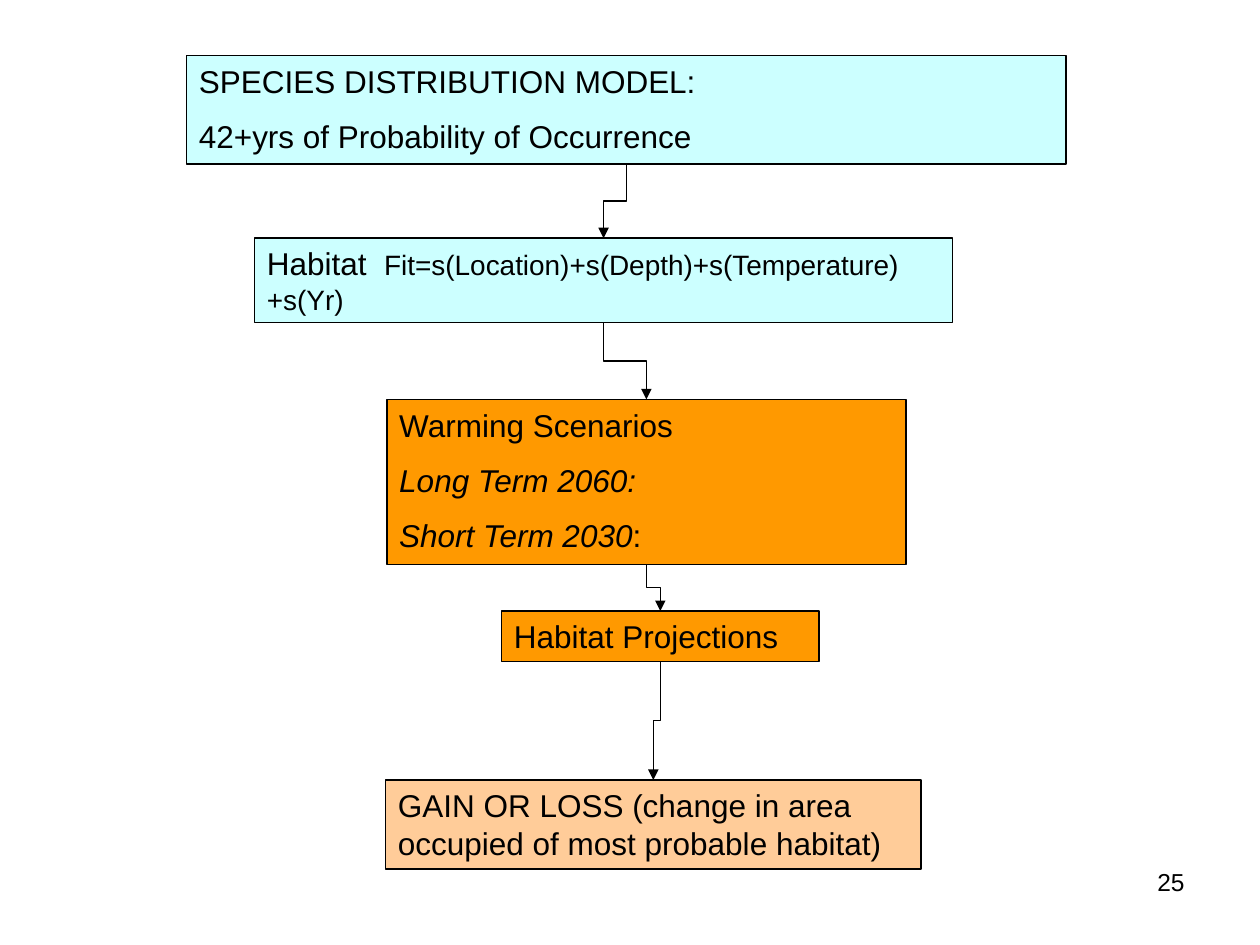
from itertools import pairwise

from pptx import Presentation
from pptx.dml.color import RGBColor
from pptx.enum.shapes import MSO_CONNECTOR, MSO_SHAPE
from pptx.enum.text import MSO_ANCHOR, PP_ALIGN
from pptx.oxml.ns import qn
from pptx.util import Inches, Pt
from lxml import etree

ELBOW = MSO_CONNECTOR.ELBOW
RECTANGLE = MSO_SHAPE.RECTANGLE
TOP = MSO_ANCHOR.TOP
LEFT, RIGHT = PP_ALIGN.LEFT, PP_ALIGN.RIGHT
BLANK_LAYOUT = 6

COLORS = {
    "ink": "000000",
    "model": "CCFFFF",
    "scenario": "FF9900",
    "outcome": "FFCC99",
}

STEPS = [
    ((1.48, 0.44, 6.98, 0.86), "model", [
        [("SPECIES DISTRIBUTION MODEL:", {})],
        [("42+yrs of Probability of Occurrence", {})],
    ]),
    ((2.02, 1.89, 5.54, 0.67), "model", [
        [("Habitat  ", {}),
         ("Fit=s(Location)+s(Depth)+s(Temperature)+s(Yr)", {"size": Pt(16)})],
    ]),
    ((3.07, 3.17, 4.12, 1.31), "scenario", [
        [("Warming Scenarios", {})],
        [("Long Term 2060:", {"italic": True})],
        [("Short Term 2030", {"italic": True}), (":", {})],
    ]),
    ((3.98, 4.85, 2.52, 0.4), "scenario", [[("Habitat Projections", {})]]),
    ((3.06, 6.19, 4.25, 0.71), "outcome", [
        [("GAIN OR LOSS (change in area occupied of most probable habitat)", {})],
    ]),
]


def rgb(name):
    """Return the named colour."""
    return RGBColor.from_string(COLORS[name])


def write_text(frame, paragraphs, align=LEFT, size=18):
    """Fill a text frame with paragraphs of formatted spans."""
    frame.word_wrap = True
    frame.vertical_anchor = TOP
    for index, spans in enumerate(paragraphs):
        para = frame.add_paragraph() if index else frame.paragraphs[0]
        para.alignment = align
        if index:
            para.space_before = Pt(10)
        for text, changes in spans:
            span = para.add_run()
            span.text = text
            span.font.color.rgb = rgb("ink")
            values = {"name": "Arial", "size": Pt(size), **changes}
            for name, value in values.items():
                setattr(span.font, name, value)


def add_step(page, bounds, color, paragraphs):
    """Draw one outlined step of the flow and return it."""
    box = page.shapes.add_shape(RECTANGLE, *map(Inches, bounds))
    box.shadow.inherit = False
    box.fill.solid()
    box.fill.fore_color.rgb = rgb(color)
    box.line.color.rgb = rgb("ink")
    box.line.width = Pt(1)
    write_text(box.text_frame, paragraphs)
    return box


def add_arrow(page, upper, lower):
    """Join two steps with an elbow arrow that leaves downwards."""
    start_x, start_y = upper.left + upper.width // 2, upper.top + upper.height
    end_x, end_y = lower.left + lower.width // 2, lower.top
    drop, shift = end_y - start_y, abs(end_x - start_x)
    left = (start_x + end_x - drop) // 2
    top = (start_y + end_y - shift) // 2
    ends = [left, left + drop]
    rightward = end_x > start_x
    if rightward:
        ends.reverse()
    arrow = page.shapes.add_connector(ELBOW, ends[0], top, ends[1], top + shift)
    arrow.rotation = 270 if rightward else 90
    arrow.line.color.rgb = rgb("ink")
    arrow.line.width = Pt(0.75)
    outline = arrow.line._get_or_add_ln()
    etree.SubElement(outline, qn("a:tailEnd"), type="triangle")
    etree.SubElement(arrow._element.spPr, qn("a:effectLst"))


def add_flow(page):
    """Draw the steps and the arrows between neighbours."""
    boxes = [add_step(page, *step) for step in STEPS]
    for upper, lower in pairwise(boxes):
        add_arrow(page, upper, lower)


def add_page_number(page, bounds, number):
    """Write the page number at the right of its box."""
    box = page.shapes.add_textbox(*map(Inches, bounds))
    write_text(box.text_frame, [[(number, {})]], RIGHT, 14)


def main():
    """Build and save the deck."""
    deck = Presentation()
    deck.slide_width, deck.slide_height = Inches(10), Inches(7.5)
    page = deck.slides.add_slide(deck.slide_layouts[BLANK_LAYOUT])
    add_flow(page)
    add_page_number(page, (7.17, 6.83, 2.33, 0.52), "25")
    deck.save("out.pptx")


if __name__ == "__main__":
    main()
